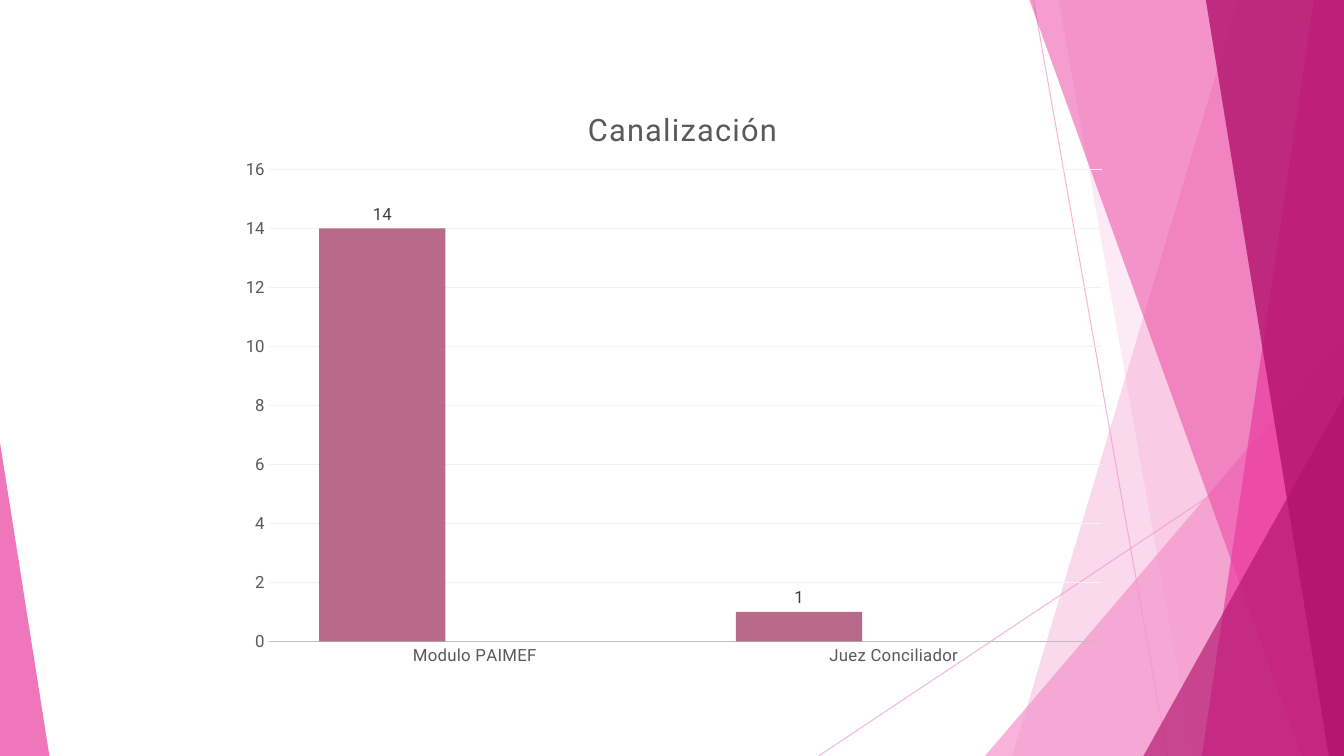
import pptx
import pptx.chart.data
import pptx.dml.color
import pptx.enum.chart
import pptx.enum.shapes
import pptx.oxml
import pptx.oxml.ns
import pptx.util
from lxml import etree
from pptx.util import Inches

COLORS = {
    "pale": "F496CB", "pink": "EB3D9F", "deep": "B2136D",
    "text": "595959", "label": "404040", "axis": "BFBFBF", "grid": "F2F2F2",
    "series1": "9C2C5C", "series2": "BC356F", "series3": "D7A5B3",
}
FONT = "Roboto"
W, H = 13.33, 7.5
qn = pptx.oxml.ns.qn


def paint(fill, element, color, alpha):
    fill.solid()
    fill.fore_color.rgb = pptx.dml.color.RGBColor.from_string(COLORS[color])
    for clr in element.xpath(".//a:solidFill/a:srgbClr"):
        etree.SubElement(clr, qn("a:alpha")).set("val", str(alpha * 1000))


def write_text(tf, text, size, color):
    r = tf.paragraphs[0].add_run()
    r.text = text
    r.font.size = pptx.util.Pt(size)
    r.font.name = FONT
    r.font.bold = False
    r.font.color.rgb = pptx.dml.color.RGBColor.from_string(COLORS[color])


prs = pptx.Presentation()
prs.slide_width, prs.slide_height = Inches(W), Inches(H)
s = prs.slides.add_slide(prs.slide_layouts[6])

# Thin crossing lines
for x1, y1, x2 in [(10.25, 0, 11.58), (W, 4.03, 8.12)]:
    line = s.shapes.add_connector(pptx.enum.shapes.MSO_CONNECTOR.STRAIGHT,
                                  Inches(x1), Inches(y1), Inches(x2), Inches(H))
    line.line.width = pptx.util.Pt(0.75)
    paint(line.line.fill, line.element, "pale", 70)
    etree.SubElement(line.element.spPr, qn("a:effectLst"))

# Facets: bands reach the right edge, triangles stand on the bottom edge
# band: top x, bottom x; triangle: left, top, width, apex position
facets = [
    ("band", (12.28, 10.04), "pale", 36),
    ("band", (10.5, 11.83), "pale", 20),
    ("triangle", (9.77, 3.33, 3.56, 1), "pale", 72),
    ("band", (10.21, 12.91), "pink", 50),
    ("band", (13.03, 11.92), "pink", 70),
    ("band", (11.96, 13.18), "deep", 80),
    ("triangle", (11.34, 3.93, 1.99, 1), "deep", 66),
    ("triangle", (0, 4.39, 0.49, 0), "pink", 70),
]
for kind, place, color, alpha in facets:
    if kind == "band":
        top_x, bottom_x = place
        fb = s.shapes.build_freeform(Inches(top_x), 0)
        fb.add_line_segments([(Inches(x), Inches(y)) for x, y in
                              [(W, 0), (W, H), (bottom_x, H)]], close=True)
        sp = fb.convert_to_shape()
    else:
        left, top, width, apex = place
        sp = s.shapes.add_shape(pptx.enum.shapes.MSO_SHAPE.ISOSCELES_TRIANGLE,
                                Inches(left), Inches(top), Inches(width), Inches(H - top))
        sp.adjustments[0] = apex
    paint(sp.fill, sp.element, color, alpha)
    sp.line.fill.background()
    sp.shadow.inherit = False

# Chart
data = pptx.chart.data.CategoryChartData()
data.categories = ["Modulo PAIMEF ", "Juez Conciliador"]
for name, values in [("Series 1", (14, 1)), ("Series 2", (None, None)),
                     ("Series 3", (None, None))]:
    data.add_series(name, values)
chart = s.shapes.add_chart(pptx.enum.chart.XL_CHART_TYPE.COLUMN_CLUSTERED,
                           Inches(2.22), Inches(0.79), Inches(8.89), Inches(5.93), data).chart
chart.font.name = FONT
chart.font.size = pptx.util.Pt(10)
chart.has_legend = False
chart.has_title = True
write_text(chart.chart_title.text_frame, "Canalización", size=22, color="text")

# Columns and their values
plot = chart.plots[0]
plot.gap_width, plot.overlap = 80, 25
plot.vary_by_categories = False
fonts = []
for i, (ser, element) in enumerate(zip(plot.series, chart.element.xpath(".//c:ser")), 1):
    paint(ser.format.fill, element, f"series{i}", 70)
    labels = ser.data_labels
    labels.show_value = True
    labels.position = pptx.enum.chart.XL_LABEL_POSITION.OUTSIDE_END
    fonts.append((labels.font, "label"))

# Axes
cat, val = chart.category_axis, chart.value_axis
for axis in (cat, val):
    axis.major_tick_mark = axis.minor_tick_mark = pptx.enum.chart.XL_TICK_MARK.NONE
    fonts.append((axis.tick_labels.font, "text"))
val.minimum_scale, val.maximum_scale, val.major_unit = 0, 16, 2
val.format.line.fill.background()
for line, color, width in [(cat.format.line, "axis", 1.25),
                           (val.major_gridlines.format.line, "grid", 0.75)]:
    line.color.rgb = pptx.dml.color.RGBColor.from_string(COLORS[color])
    line.width = pptx.util.Pt(width)
for font, color in fonts:
    font.name = FONT
    font.size = pptx.util.Pt(12)
    font.color.rgb = pptx.dml.color.RGBColor.from_string(COLORS[color])

# Letter spacing of the title and the category names
for query, spacing in [(".//c:title//a:rPr", 100), (".//c:catAx//a:defRPr", 20)]:
    for props in chart.element.xpath(query):
        props.set("spc", str(spacing))

# Fixed places of the title and the plot, as shares of the chart
title = chart.element.xpath("./c:chart/c:title")[0]
area = chart.element.xpath(".//c:plotArea")[0]
for parent, index, box in [
        (title, 1, {"xMode": "edge", "yMode": "edge", "x": 0.4, "y": 0.04}),
        (area, 0, {"layoutTarget": "inner", "xMode": "edge", "yMode": "edge",
                   "x": 0.05, "y": 0.15, "w": 0.93, "h": 0.79})]:
    for old in parent.xpath("./c:layout"):
        parent.remove(old)
    layout = etree.Element(qn("c:layout"))
    manual = etree.SubElement(layout, qn("c:manualLayout"))
    for tag, value in box.items():
        etree.SubElement(manual, qn("c:" + tag)).set("val", str(value))
    parent.insert(index, layout)

prs.save("out.pptx")
